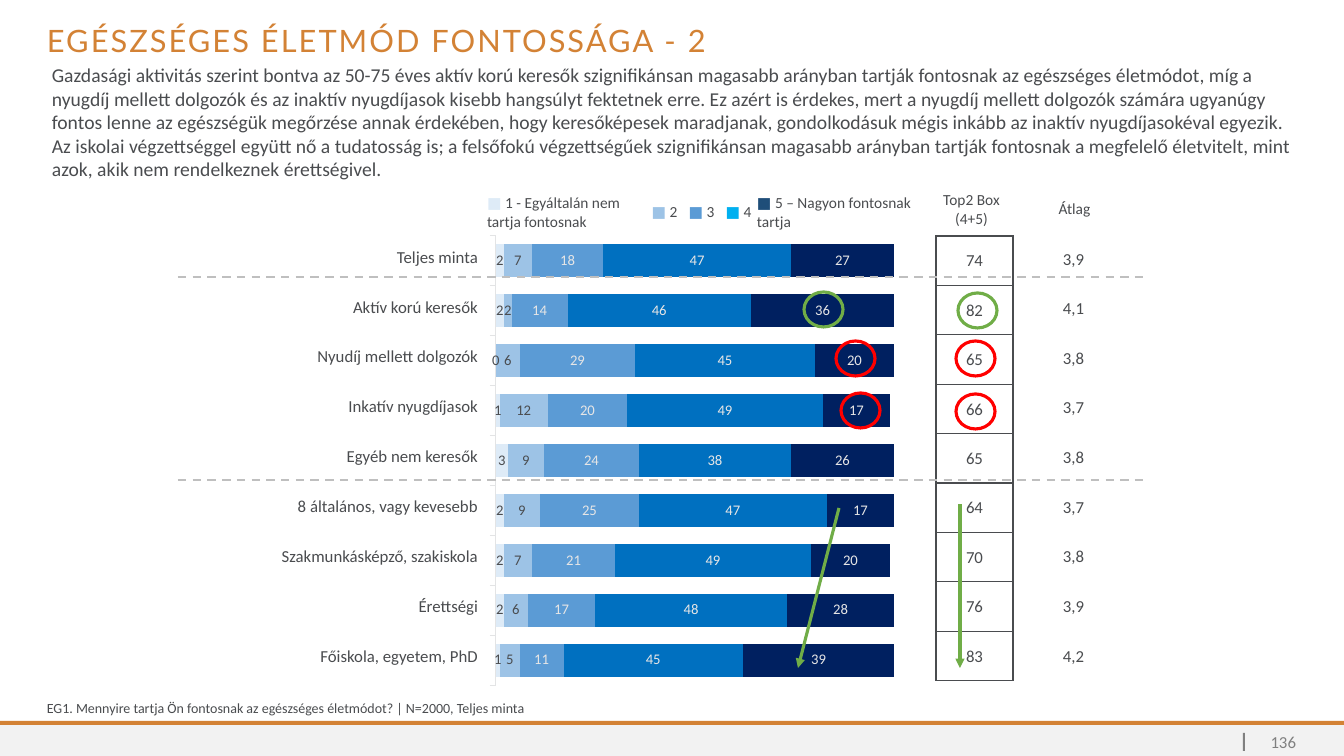
from dataclasses import dataclass
from lxml.etree import SubElement as Sub
from pptx import Presentation
from pptx.chart.data import CategoryChartData as Data
from pptx.dml.color import RGBColor as RGB
from pptx.enum.chart import XL_CHART_TYPE as Chart, XL_TICK_LABEL_POSITION as Tick, XL_TICK_MARK as Mark
from pptx.enum.dml import MSO_LINE_DASH_STYLE as Dash
from pptx.enum.shapes import MSO_CONNECTOR as Link, MSO_SHAPE as Shape
from pptx.enum.text import MSO_ANCHOR as Anchor, PP_ALIGN as Align
from pptx.oxml import parse_xml
from pptx.oxml.ns import nsdecls, qn
from pptx.util import Pt

NO_STYLE = "{2D5ABB26-0587-4C30-8999-92F81FD0307C}"


@dataclass(frozen=True)
class Theme:
    ink: str = "4A4C4F"
    gold: str = "D38235"
    gray: str = "808080"
    pale: str = "F2F2F2"
    light: str = "E7E6E6"
    axis: str = "E3E4E5"
    dash: str = "BFBFBF"
    green: str = "70AD47"
    red: str = "FF0000"
    bars: tuple = ("DEEBF7", "9DC3E6", "5B9BD5", "0070C0", "002060")
    keys: tuple = ("DEEBF7", "9DC3E6", "5B9BD5", "00B0F0", "1F4E79")
    font: str = "Calibri"
    head: str = "Lato"
    title: float = 22
    body: float = 14
    cell: float = 12
    key: float = 11
    label: float = 10.5
    note: float = 10


def px(n):
    return round(n * 914400 / 100.8)


def write(frame, text, size, color, font="Calibri", align=Align.LEFT, mark=None, track=0, lead=None):
    for i, line in enumerate(text.split("\n")):
        para = frame.add_paragraph() if i else frame.paragraphs[0]
        para.alignment = align
        if lead:
            para.line_spacing = lead
        parts = [(line, color, False)]
        if mark:
            parts.insert(0, ("■ ", mark, True))
        for words, tint, bold in parts:
            run = para.add_run()
            run.text = words
            run.font.name, run.font.size, run.font.bold = font, Pt(size), bold
            run.font.color.rgb = RGB.from_string(tint)
            if track:
                run._r.get_or_add_rPr().set("spc", str(track))


class Page:
    """Draws the parts of one slide in a shared style."""

    def __init__(self, slide, theme):
        self.shapes, self.theme = slide.shapes, theme

    def text(self, box, words, size, color, anchor=Anchor.TOP, **form):
        frame = self.shapes.add_textbox(*map(px, box)).text_frame
        frame.word_wrap, frame.vertical_anchor = True, anchor
        write(frame, words, size, color, **form)

    def block(self, box, color):
        rect = self.shapes.add_shape(Shape.RECTANGLE, *map(px, box))
        rect.shadow.inherit = False
        rect.fill.solid()
        rect.fill.fore_color.rgb = RGB.from_string(color)
        rect.line.fill.background()

    def ring(self, x, y, color):
        ring = self.shapes.add_shape(Shape.OVAL, px(x), px(y), px(39), px(35))
        ring.shadow.inherit = False
        ring.fill.background()
        ring.line.color.rgb, ring.line.width = RGB.from_string(color), Pt(2.25)

    def line(self, start, end, color, width, dash=None, arrow=False):
        link = self.shapes.add_connector(Link.STRAIGHT, *map(px, start + end))
        link.line.color.rgb, link.line.width = RGB.from_string(color), Pt(width)
        if dash:
            link.line.dash_style = dash
        if arrow:
            Sub(link.line._get_or_add_ln(), qn("a:tailEnd"), type="triangle")
        Sub(link._element.spPr, qn("a:effectLst"))

    def table(self, x, y, cols, height, rows, size, aligns, pad, marks=None, edge=None):
        frame = self.shapes.add_table(len(rows), len(cols), px(x), px(y), px(sum(cols)), px(height))
        grid = frame.table
        grid.first_row = grid.horz_banding = False
        next(frame._element.iter(qn("a:tableStyleId"))).text = NO_STYLE
        for col, width in zip(grid.columns, cols):
            col.width = px(width)
        for r, row in enumerate(rows):
            grid.rows[r].height = px(height / len(rows))
            for c, words in enumerate(row):
                cell = grid.cell(r, c)
                cell.vertical_anchor = Anchor.MIDDLE
                cell.margin_left, cell.margin_top, cell.margin_right, cell.margin_bottom = map(px, pad)
                write(cell.text_frame, words, size, self.theme.ink, align=aligns[c], mark=marks and marks[c])
                if edge:
                    self.frame(cell, edge)
                cell.fill.background()

    def frame(self, cell, color):
        for side in "LRTB":
            edge = Sub(cell._tc.get_or_add_tcPr(), qn(f"a:ln{side}"), w=str(Pt(1)))
            Sub(Sub(edge, qn("a:solidFill")), qn("a:srgbClr"), val=color)

    def chart(self, box, rows):
        look = self.theme
        data = Data(number_format="0")
        data.categories = [str(n + 1) for n in range(len(rows))]
        for n, vals in enumerate(zip(*rows), 1):
            data.add_series(f"Series {n}", vals)
        chart = self.shapes.add_chart(Chart.BAR_STACKED, *map(px, box), data).chart
        chart.has_legend = chart.has_title = False
        chart.font.name, chart.font.size = look.font, Pt(look.label)
        chart.font.color.rgb = RGB.from_string(look.ink)
        cats, vals = chart.category_axis, chart.value_axis
        cats.reverse_order = True
        cats.tick_label_position, cats.major_tick_mark = Tick.NONE, Mark.OUTSIDE
        cats.format.line.color.rgb, cats.format.line.width = RGB.from_string(look.axis), Pt(0.75)
        vals.minimum_scale, vals.maximum_scale, vals.major_unit = 0, 100, 20
        vals.has_major_gridlines = vals.visible = False
        plot = chart.plots[0]
        plot.gap_width, plot.overlap, plot.vary_by_categories = 50, 100, False
        for n, (series, color) in enumerate(zip(plot.series, look.bars)):
            series.format.fill.solid()
            series.format.fill.fore_color.rgb = RGB.from_string(color)
            tags = series.data_labels
            tags.show_value, tags.number_format, tags.number_format_is_linked = True, "0", False
            tags.font.name, tags.font.size = look.font, Pt(look.label)
            tags.font.color.rgb = RGB.from_string(look.ink if n < 2 else look.light)
        area = chart._chartSpace.chart.plotArea
        for old in area.findall(qn("c:layout")):
            area.remove(old)
        spots = {"layoutTarget": "inner", "xMode": "edge", "yMode": "edge",
                 "x": 0.023, "y": 0, "w": 0.929, "h": 0.994}
        tags = "".join(f'<c:{k} val="{v}"/>' for k, v in spots.items())
        area.insert(0, parse_xml(f'<c:layout {nsdecls("c")}><c:manualLayout>{tags}</c:manualLayout></c:layout>'))


GROUPS = [
    ("Teljes minta", (2, 7, 18, 47, 27), "74", "3,9"),
    ("Aktív korú keresők", (2, 2, 14, 46, 36), "82", "4,1"),
    ("Nyudíj mellett dolgozók", (0, 6, 29, 45, 20), "65", "3,8"),
    ("Inkatív nyugdíjasok", (1, 12, 20, 49, 17), "66", "3,7"),
    ("Egyéb nem keresők", (3, 9, 24, 38, 26), "65", "3,8"),
    ("8 általános, vagy kevesebb", (2, 9, 25, 47, 17), "64", "3,7"),
    ("Szakmunkásképző, szakiskola", (2, 7, 21, 49, 20), "70", "3,8"),
    ("Érettségi", (2, 6, 17, 48, 28), "76", "3,9"),
    ("Főiskola, egyetem, PhD", (1, 5, 11, 45, 39), "83", "4,2"),
]
BODY = (
    "Gazdasági aktivitás szerint bontva az 50-75 éves aktív korú keresők szignifikánsan magasabb arányban "
    "tartják fontosnak az egészséges életmódot, míg a nyugdíj mellett dolgozók és az inaktív nyugdíjasok "
    "kisebb hangsúlyt fektetnek erre. Ez azért is érdekes, mert a nyugdíj mellett dolgozók számára ugyanúgy "
    "fontos lenne az egészségük megőrzése annak érdekében, hogy keresőképesek maradjanak, gondolkodásuk "
    "mégis inkább az inaktív nyugdíjasokéval egyezik.\n"
    "Az iskolai végzettséggel együtt nő a tudatosság is; a felsőfokú végzettségűek szignifikánsan magasabb "
    "arányban tartják fontosnak a megfelelő életvitelt, mint azok, akik nem rendelkeznek érettségivel."
)
KEYS = ["1 - Egyáltalán nem tartja fontosnak", "2", "3", "4", "5 – Nagyon fontosnak tartja"]


def main():
    deck = Presentation()
    deck.slide_width, deck.slide_height = px(1344), px(756)
    look = Theme()
    page = Page(deck.slides.add_slide(deck.slide_layouts[6]), look)
    page.block((0, 725, 1344, 31), look.pale)
    page.block((0, 721, 1344, 4), look.gold)
    page.block((1243, 733, 2, 18), look.gray)

    page.text((37, 21, 1270, 46), "EGÉSZSÉGES ÉLETMÓD FONTOSSÁGA - 2", look.title, look.gold,
              font=look.head, track=150, lead=0.9)
    page.text((42, 58, 1265, 129), BODY, look.body, look.ink)
    page.text((37, 695, 1143, 27),
              "EG1. Mennyire tartja Ön fontosnak az egészséges életmódot? | N=2000, Teljes minta",
              look.note, look.ink)
    page.text((1259, 733, 47, 18), "136", look.cell, look.gray, Anchor.MIDDLE, align=Align.RIGHT)

    names, rows, tops, means = zip(*GROUPS)
    mid, thin = [Align.CENTER], (1, 1, 1, 0)
    page.table(229, 232, [250], 449, [[n] for n in names], look.cell, [Align.RIGHT], thin)
    page.chart((486, 235, 429, 453), rows)
    page.table(1045, 234, [57], 447, [[m] for m in means], look.cell, mid, thin)
    page.table(487, 190, [159, 37, 37, 37, 157], 45, [KEYS], look.key,
               [Align.LEFT, *mid * 3, Align.LEFT], (0, 4, 0, 4), marks=look.keys)
    page.table(920, 186, [103, 103], 47, [["Top2 Box\n(4+5)", "Átlag"]], look.key, mid * 2, (10, 5, 10, 5))
    page.table(936, 236, [77], 445, [[t] for t in tops], look.cell, mid, thin, edge=look.ink)

    for y in (277, 480):
        page.line((178, y), (1149, y), look.dash, 1.5, dash=Dash.DASH)
    for x, y in ((804, 292), (958, 293)):
        page.ring(x, y, look.green)
    for x, y in ((836, 341), (841, 393), (956, 341), (956, 394)):
        page.ring(x, y, look.red)
    for start, end in (((839, 508), (798, 668)), ((960, 504), (960, 668))):
        page.line(start, end, look.green, 2.25, arrow=True)
    deck.save("out.pptx")


if __name__ == "__main__":
    main()
